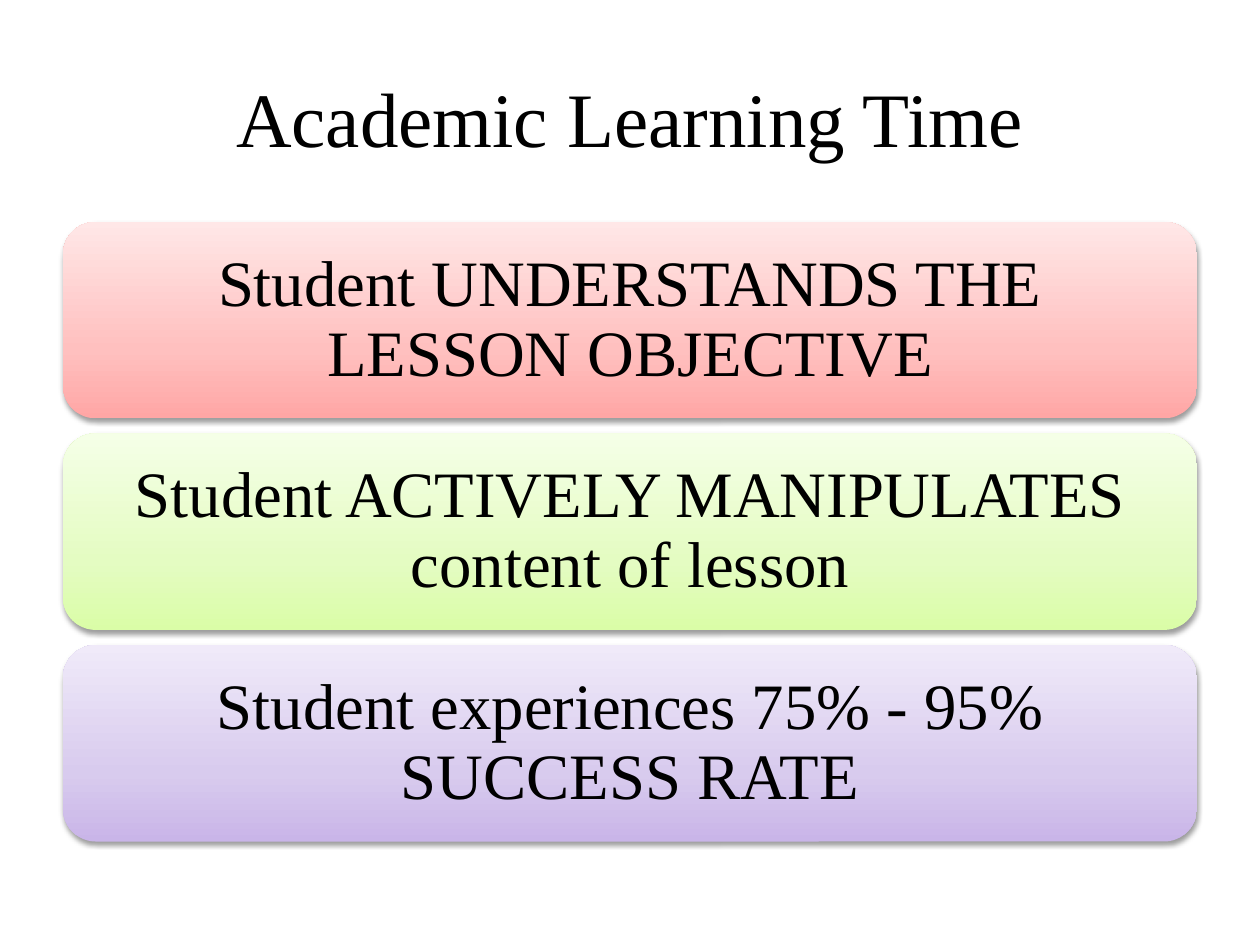
from copy import deepcopy

from lxml import etree
from pptx import Presentation
from pptx.dml import color
from pptx.enum import shapes, text
from pptx.oxml import ns
from pptx.util import Pt

FONT = "Times New Roman"
LEFT, WIDTH = 36, 648
CARD_TOP, CARD_HEIGHT, CARD_PITCH = 126.8, 112.3, 120.9
STOPS = (0, 0.35, 1)
CARDS = [
    ("Student UNDERSTANDS THE LESSON OBJECTIVE", ("FFA6A5", "FFC0BF", "FFE7E7")),
    ("Student ACTIVELY MANIPULATES content of lesson", ("DAFDA7", "E4FCC2", "F5FFE7")),
    ("Student experiences 75% - 95% SUCCESS RATE", ("C9B5E8", "D8CBEE", "F0EAF9")),
]


def rgb(value):
    """Turn a hex string into a colour."""
    return color.RGBColor.from_string(value)


def apply(target, values):
    """Set each named attribute on the target."""
    for name, value in values.items():
        setattr(target, name, value)


def write(shape, words, size, inset, spacing):
    """Write one centred paragraph in a shape."""
    frame = shape.text_frame
    margins = {f"margin_{side}": Pt(inset) for side in ("left", "top", "right", "bottom")}
    apply(frame, {"word_wrap": True, "vertical_anchor": text.MSO_ANCHOR.MIDDLE, **margins})
    para = frame.paragraphs[0]
    apply(para, {"alignment": text.PP_ALIGN.CENTER, "line_spacing": spacing})
    span = para.add_run()
    span.text = words
    apply(span.font, {"name": FONT, "size": Pt(size)})
    span.font.color.rgb = rgb("000000")


def add_gradient(shape, colours):
    """Fill a shape with a gradient rising from its bottom edge."""
    shape.fill.gradient()
    shape.fill.gradient_angle = 90
    stop_list = shape._element.spPr.find(".//" + ns.qn("a:gsLst"))
    stop_list.insert(1, deepcopy(stop_list[0]))
    for stop, position, colour in zip(shape.fill.gradient_stops, STOPS, colours):
        stop.position = position
        stop.color.rgb = rgb(colour)


def add_shadow(shape):
    """Give a shape a soft shadow below it."""
    shape.shadow.inherit = False
    effects = shape._element.spPr.find(ns.qn("a:effectLst"))
    shadow = etree.SubElement(effects, ns.qn("a:outerShdw"), blurRad=str(Pt(3.1)),
                              dist=str(Pt(1.6)), dir="5400000", rotWithShape="0")
    shade = etree.SubElement(shadow, ns.qn("a:srgbClr"), val="000000")
    etree.SubElement(shade, ns.qn("a:alpha"), val="38000")


def add_title(page, words):
    """Add the slide heading."""
    box = page.shapes.add_textbox(Pt(LEFT), Pt(21.6), Pt(WIDTH), Pt(90))
    write(box, words, 44, 3.6, 1.0)


def add_card(page, top, words, colours):
    """Add a rounded card with its statement."""
    card = page.shapes.add_shape(shapes.MSO_SHAPE.ROUNDED_RECTANGLE,
                                 Pt(LEFT), Pt(top), Pt(WIDTH), Pt(CARD_HEIGHT))
    add_gradient(card, colours)
    card.line.fill.background()
    add_shadow(card)
    write(card, words, 37, 10.8, 0.9)


def main():
    """Build and save the slide."""
    deck = Presentation()
    apply(deck, {"slide_width": Pt(720), "slide_height": Pt(540)})
    page = deck.slides.add_slide(deck.slide_layouts[6])
    add_title(page, "Academic Learning Time")
    for row, (words, colours) in enumerate(CARDS):
        add_card(page, CARD_TOP + row * CARD_PITCH, words, colours)
    deck.save("out.pptx")


if __name__ == "__main__":
    main()
